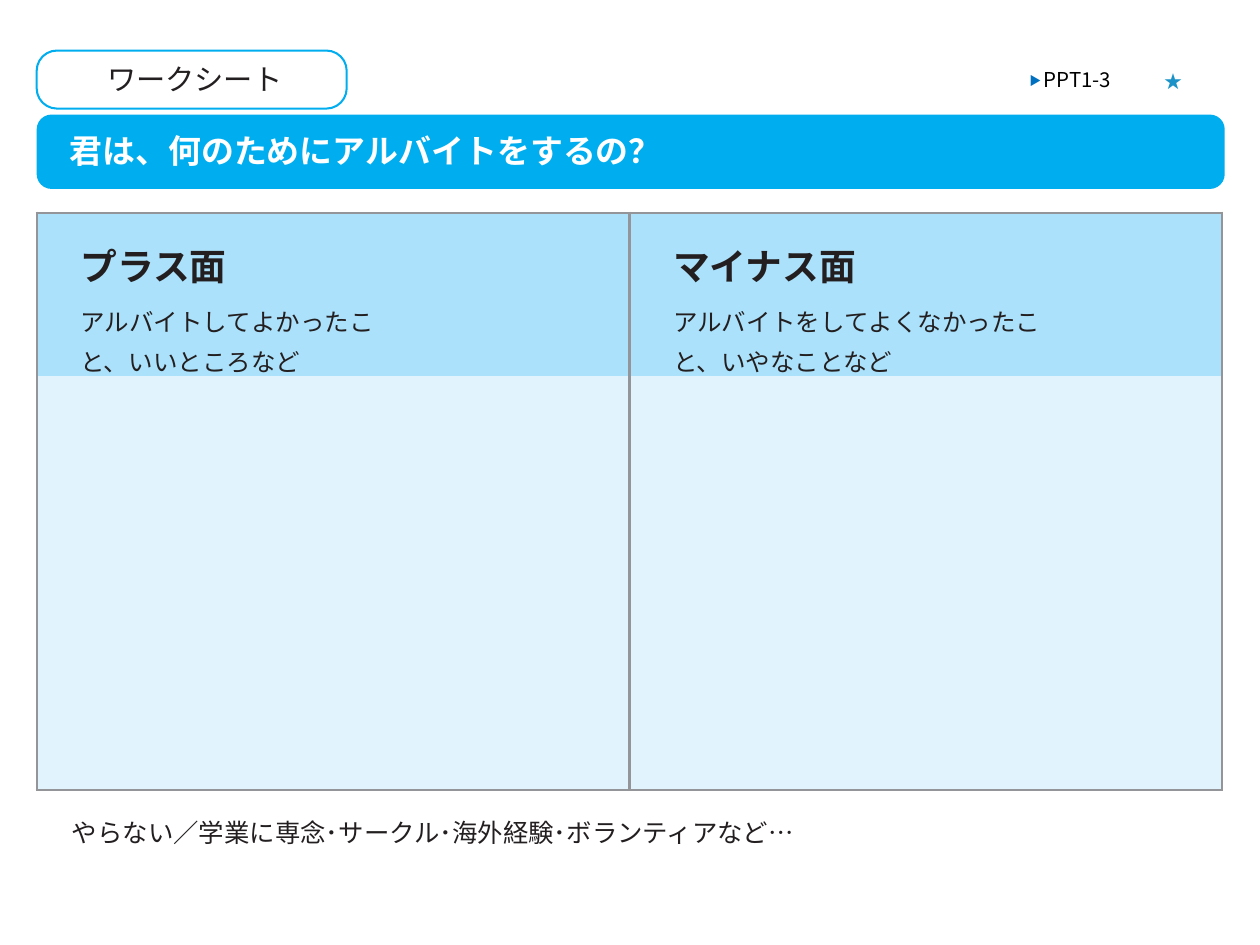
from dataclasses import dataclass

from lxml.etree import SubElement
from pptx import Presentation
from pptx.dml.color import RGBColor
from pptx.enum.shapes import MSO_SHAPE
from pptx.enum.text import MSO_AUTO_SIZE
from pptx.oxml import parse_xml
from pptx.oxml.ns import nsdecls, qn
from pptx.util import Cm, Pt


@dataclass(frozen=True)
class Theme:
    font: str = "Noto Sans CJK JP"
    ink: str = "231F20"
    black: str = "000000"
    white: str = "FFFFFF"
    accent: str = "00AEEF"
    arrow: str = "0070C0"
    star: str = "1B93C9"
    border: str = "939598"
    header: str = "ABE1FA"
    body: str = "E1F4FD"
    heading_size: float = 21
    title_size: float = 18.8
    label_size: float = 16.7
    footer_size: float = 14.5
    text_size: float = 14
    marker_size: float = 11.7
    star_size: float = 10.3


class SlideBuilder:
    def __init__(self, slide, theme):
        self.slide = slide
        self.theme = theme

    @staticmethod
    def apply(target, values):
        for name, value in values.items():
            setattr(target, name, value)

    def run(self, paragraph, text, size, color, bold=False, baseline=None):
        run = paragraph.add_run()
        run.text = text
        self.apply(run.font, {"name": self.theme.font, "size": Pt(size), "bold": bold})
        run.font.color.rgb = RGBColor.from_string(color)
        properties = run.font._element
        SubElement(properties, qn("a:ea")).set("typeface", self.theme.font)
        if baseline:
            properties.set("baseline", str(baseline))

    def text(self, box, runs, left_margin=0, top_margin=0.05, wrap=True):
        shape = self.slide.shapes.add_textbox(*map(Cm, box))
        frame = shape.text_frame
        self.apply(frame, {
            "margin_left": Cm(left_margin), "margin_top": Cm(top_margin),
            "margin_right": 0, "margin_bottom": 0,
            "word_wrap": wrap, "auto_size": MSO_AUTO_SIZE.SHAPE_TO_FIT_TEXT,
        })
        for values in runs:
            self.run(frame.paragraphs[0], **values)

    def rounded(self, box, radius, fill=None, line=None):
        shape = self.slide.shapes.add_shape(MSO_SHAPE.ROUNDED_RECTANGLE, *map(Cm, box))
        shape.shadow.inherit = False
        shape.adjustments[0] = radius
        if fill:
            shape.fill.solid()
            shape.fill.fore_color.rgb = RGBColor.from_string(fill)
        else:
            shape.fill.background()
        if line:
            shape.line.color.rgb = RGBColor.from_string(line)
            shape.line.width = Pt(1.17)
        else:
            shape.line.fill.background()

    def cell(self, cell, fill, sides):
        cell.fill.solid()
        cell.fill.fore_color.rgb = RGBColor.from_string(fill)
        properties = cell._tc.get_or_add_tcPr()
        for index, side in enumerate("LRTB"):
            if side in sides:
                paint = f'<a:solidFill><a:srgbClr val="{self.theme.border}"/></a:solidFill>'
            else:
                paint = "<a:noFill/>"
            properties.insert(index, parse_xml(
                f'<a:ln{side} {nsdecls("a")} w="{Pt(1.5)}">{paint}</a:ln{side}>'))

    def table(self, box, row_heights, columns):
        theme = self.theme
        table = self.slide.shapes.add_table(
            len(row_heights), len(columns), *map(Cm, box)).table
        self.apply(table, {"first_row": False, "horz_banding": False})
        for row, height in zip(table.rows, row_heights):
            row.height = Cm(height)
        for index, (heading, detail, right_margin) in enumerate(columns):
            header, body = table.cell(0, index), table.cell(1, index)
            self.cell(header, theme.header, "LRT")
            self.cell(body, theme.body, "LRB")
            self.apply(header, {
                "margin_left": Cm(0.88), "margin_right": Cm(right_margin),
                "margin_top": Cm(0.51), "margin_bottom": 0,
            })
            frame = header.text_frame
            self.run(frame.paragraphs[0], heading, theme.heading_size, theme.ink, True)
            paragraph = frame.add_paragraph()
            self.apply(paragraph, {"line_spacing": 1.1, "space_before": Pt(4.8)})
            self.run(paragraph, detail, theme.text_size, theme.ink)


def main():
    presentation = Presentation()
    presentation.slide_width, presentation.slide_height = Cm(25.4), Cm(19.05)
    theme = Theme()
    slide = presentation.slides.add_slide(presentation.slide_layouts[6])
    builder = SlideBuilder(slide, theme)

    # Worksheet label
    builder.rounded((0.74, 1.02, 6.25, 1.17), 0.35, line=theme.accent)
    builder.text((2.16, 1.19, 4.06, 0.76), [
        {"text": "ワークシート", "size": theme.label_size, "color": theme.ink}])

    # Footer examples
    builder.text((1.45, 16.43, 18.59, 0.66), [
        {"text": "やらない／学業に専念･サークル･海外経験･ボランティアなど…",
         "size": theme.footer_size, "color": theme.ink}])

    # Plus and minus table: heading, detail, right margin
    builder.table((0.74, 4.29, 23.9, 11.64), (3.28, 8.36), [
        ("プラス面", "アルバイトしてよかったこと、いいところなど", 4.95),
        ("マイナス面", "アルバイトをしてよくなかったこと、いやなことなど", 3.43),
    ])

    # Sheet number and star
    builder.text((20.75, 1.32, 2.51, 0.53), [
        {"text": "▶ ", "size": theme.marker_size, "color": theme.arrow, "baseline": 9000},
        {"text": "PPT1-3", "size": theme.marker_size, "color": theme.black},
    ], top_margin=0.03)
    builder.text((22.91, 1.3, 1.6, 0.69), [
        {"text": "★", "size": theme.star_size, "color": theme.star}],
        left_margin=0.56, top_margin=0.13, wrap=False)

    # Title banner
    builder.rounded((0.74, 2.31, 23.95, 1.5), 0.2, fill=theme.accent)
    builder.text((1.4, 2.59, 16.33, 0.84), [
        {"text": "君は、何のためにアルバイトをするの？",
         "size": theme.title_size, "color": theme.white, "bold": True}])

    presentation.save("out.pptx")


if __name__ == "__main__":
    main()
